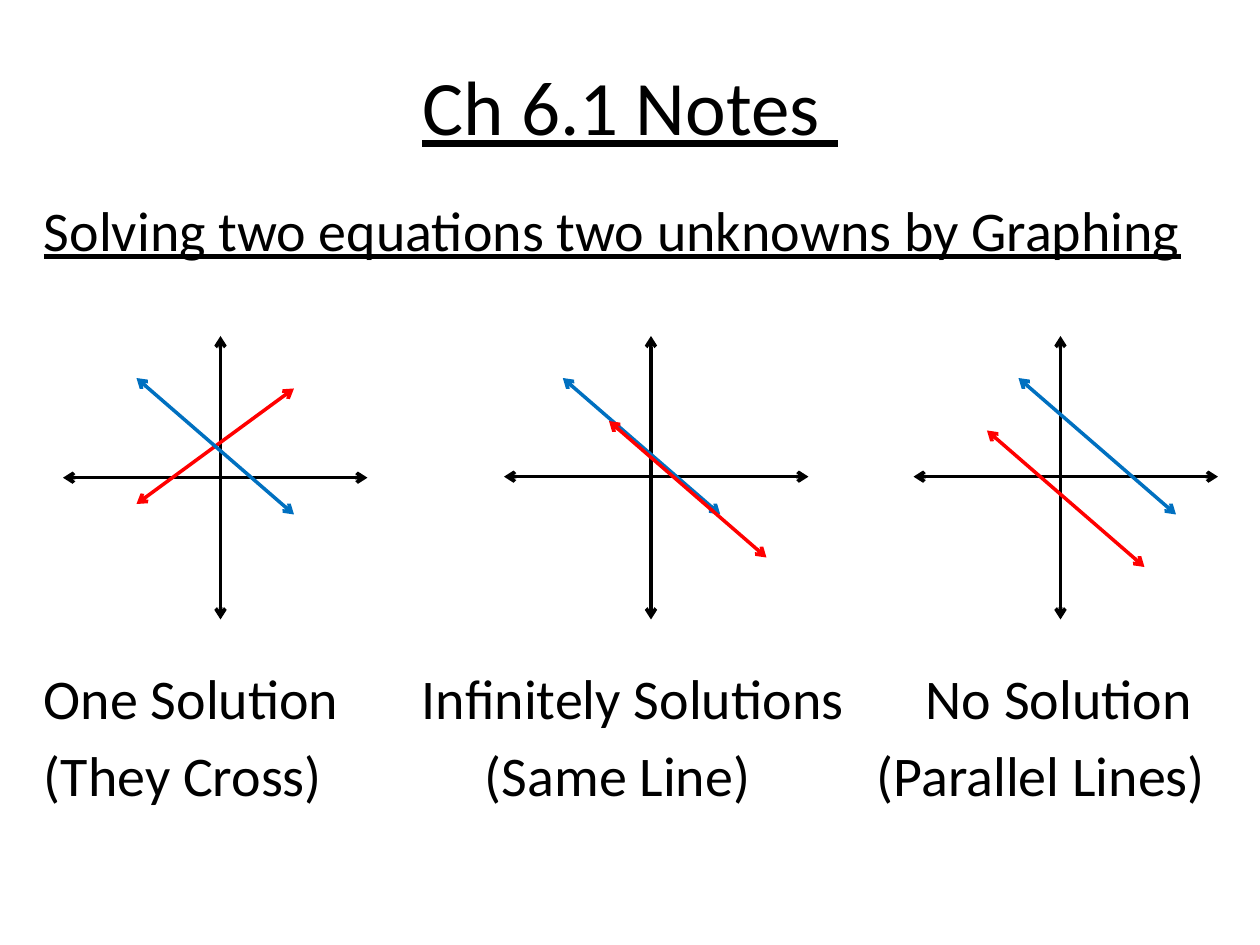
from dataclasses import dataclass

from lxml import etree
from pptx import Presentation
from pptx import util as u
from pptx.dml.color import RGBColor
from pptx.enum import shapes, text
from pptx.oxml import ns

PX = 7620


@dataclass(frozen=True)
class Theme:
    """Colours, font and sizes of the slide."""
    ink: RGBColor = RGBColor(0, 0, 0)
    red: RGBColor = RGBColor(255, 0, 0)
    blue: RGBColor = RGBColor(0, 112, 192)
    font: str = "Calibri"
    title: int = 44
    body: int = 32
    line: int = 2


T = Theme()


def add_box(s, box, anchor):
    """Add a wrapping text box and return its text frame."""
    tf = s.shapes.add_textbox(*(v * PX for v in box)).text_frame
    tf.word_wrap = True
    tf.vertical_anchor = anchor
    return tf


def set_font(p, size, underline=False):
    """Set the theme font on a paragraph."""
    f = p.font
    f.name, f.size, f.underline = T.font, u.Pt(size), underline
    f.color.rgb = T.ink


def set_tabs(p, stops):
    """Give a paragraph left tab stops in px from the text edge."""
    tabs = etree.SubElement(p._p.get_or_add_pPr(), ns.qn("a:tabLst"))
    for stop in stops:
        etree.SubElement(tabs, ns.qn("a:tab"), pos=str(stop * PX), algn="l")


def add_title(s, box):
    """Place the centred, underlined title."""
    p = add_box(s, box, text.MSO_ANCHOR.MIDDLE).paragraphs[0]
    p.text = "Ch 6.1 Notes "
    p.alignment = text.PP_ALIGN.CENTER
    set_font(p, T.title, True)


def add_body(s, box):
    """Place the heading and the two tabbed caption rows."""
    tf = add_box(s, box, text.MSO_ANCHOR.TOP)
    rows = [
        ("Solving two equations two unknowns by Graphing", 0, (), True),
        ("One Solution\tInfinitely Solutions\tNo Solution", 229, (360, 840), False),
        ("(They Cross)\t(Same Line)\t(Parallel Lines)", 6, (420, 793), False),
    ]
    for i, (words, gap, stops, underline) in enumerate(rows):
        p = tf.add_paragraph() if i else tf.paragraphs[0]
        p.text = words
        p.space_before = u.Pt(gap)
        if stops:
            set_tabs(p, stops)
        set_font(p, T.body, underline)


def add_arrow(s, x1, y1, x2, y2, color):
    """Draw a straight line with an open arrowhead at both ends."""
    c = s.shapes.add_connector(
        shapes.MSO_CONNECTOR.STRAIGHT, *(v * PX for v in (x1, y1, x2, y2)))
    c.line.color.rgb = color
    c.line.width = u.Pt(T.line)
    for end in ("a:headEnd", "a:tailEnd"):
        etree.SubElement(c.line._ln, ns.qn(end), type="arrow")
    etree.SubElement(c._element.spPr, ns.qn("a:effectLst"))


def add_graph(s, box, origin, lines):
    """Draw the axes through the origin and the given lines in a box."""
    x, y, w, h = box
    ox, oy = origin
    axes = [(ox, 0, ox, h, T.ink), (0, oy, w, oy, T.ink)]
    for x1, y1, x2, y2, color in axes + lines:
        add_arrow(s, x + x1, y + y1, x + x2, y + y2, color)


def main():
    """Build the slide and save it."""
    prs = Presentation()
    prs.slide_width, prs.slide_height = 1200 * PX, 900 * PX
    s = prs.slides.add_slide(prs.slide_layouts[6])
    add_title(s, (90, 20, 1020, 160))
    add_body(s, (30, 180, 1140, 650))
    graphs = [
        (60, (150, 135), [(70, 160, 220, 50, T.red), (70, 40, 220, 170, T.blue)]),
        (480, (140, 134), [(56, 40, 206, 170, T.blue), (100, 81, 250, 211, T.red)]),
        (870, (140, 134), [(100, 40, 250, 170, T.blue), (70, 90, 220, 220, T.red)]),
    ]
    for left, origin, lines in graphs:
        add_graph(s, (left, 320, 290, 270), origin, lines)
    prs.save("out.pptx")


if __name__ == "__main__":
    main()
